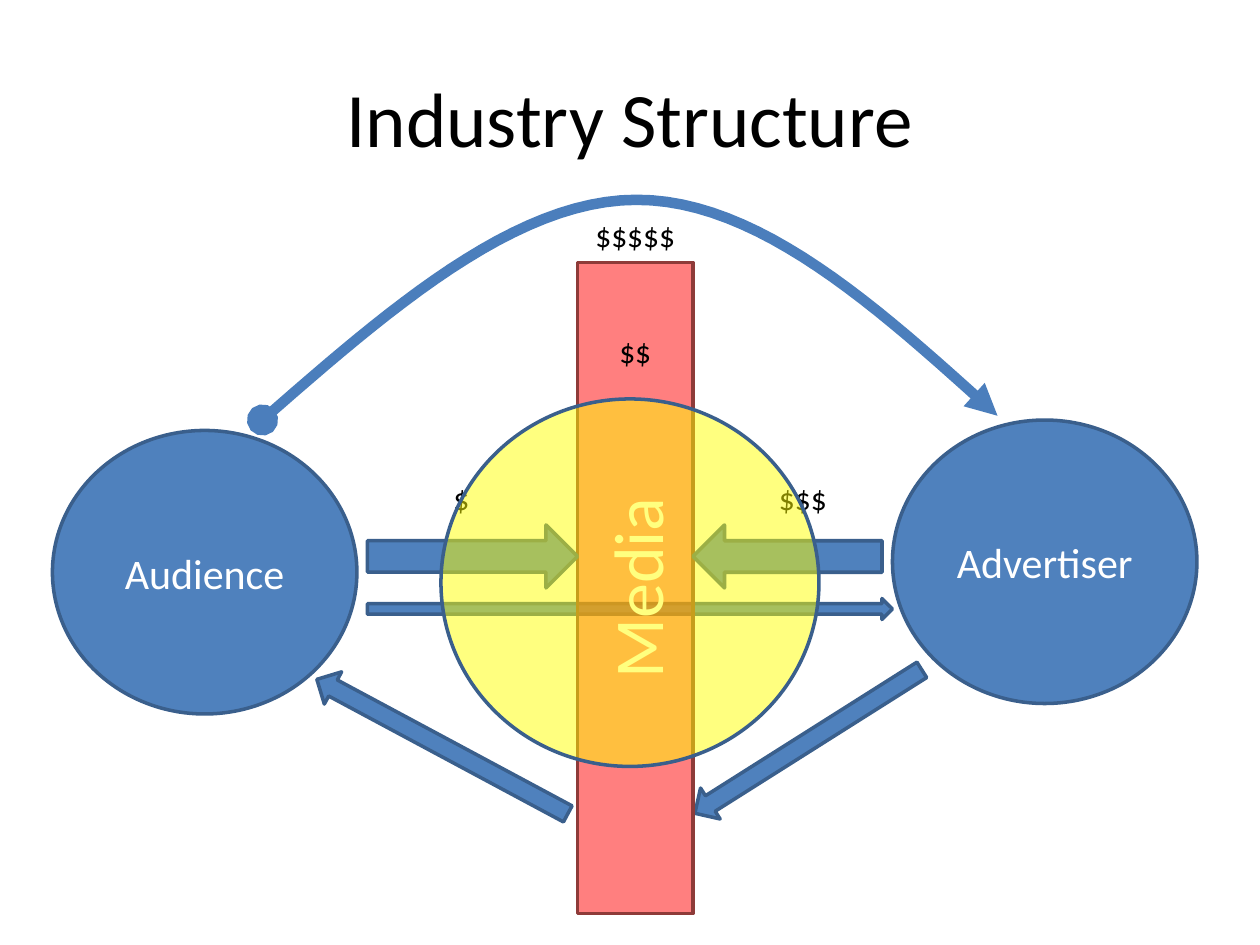
from dataclasses import dataclass

from lxml import etree
from pptx import Presentation
from pptx.dml.color import RGBColor
from pptx.enum.shapes import MSO_SHAPE
from pptx.enum.text import MSO_ANCHOR, PP_ALIGN
from pptx.oxml.ns import qn
from pptx.slide import Slide
from pptx.util import Pt

ELLIPSE = MSO_SHAPE.OVAL
RECTANGLE = MSO_SHAPE.RECTANGLE
ARROW = MSO_SHAPE.RIGHT_ARROW
LEFT, CENTER = PP_ALIGN.LEFT, PP_ALIGN.CENTER
MIDDLE, TOP = MSO_ANCHOR.MIDDLE, MSO_ANCHOR.TOP
TITLE_ONLY = 5


def color(value):
    return RGBColor.from_string(value)


def place(shape, left, top, width, height):
    shape.left, shape.top = Pt(left), Pt(top)
    shape.width, shape.height = Pt(width), Pt(height)


def write(shape, text, font="Calibri", size=18, ink="000000", align=CENTER, anchor=TOP, vertical=None):
    frame = shape.text_frame
    frame.word_wrap = True
    frame.vertical_anchor = anchor
    if vertical:
        shape.element.txBody.find(qn("a:bodyPr")).set("vert", vertical)
    paragraph = frame.paragraphs[0]
    paragraph.alignment = align
    run = paragraph.add_run()
    run.text = text
    run.font.name = font
    run.font.size = Pt(size)
    run.font.color.rgb = color(ink)


def bezier(start, first, second, end, steps=24):
    """Return the points of a cubic curve after its start."""
    points = []
    for step in range(1, steps + 1):
        t = step / steps
        weights = ((1 - t) ** 3, 3 * t * (1 - t) ** 2, 3 * t * t * (1 - t), t ** 3)
        points.append(tuple(
            sum(weight * value for weight, value in zip(weights, values))
            for values in zip(start, first, second, end)
        ))
    return points


@dataclass
class Diagram:
    slide: Slide
    fill: str = "4F81BD"
    outline: str = "3A5F8C"
    curve_color: str = "4B7EBC"

    def title(self, text, box):
        title = self.slide.shapes.title
        place(title, *box)
        write(title, text, size=44, anchor=MIDDLE)

    def block(self, kind, box, fill=None, outline=None, opacity=None, rotation=0):
        shape = self.slide.shapes.add_shape(kind, *map(Pt, box))
        shape.shadow.inherit = False
        shape.rotation = rotation
        shape.fill.solid()
        shape.fill.fore_color.rgb = color(fill or self.fill)
        if opacity is not None:
            rgb = shape.element.spPr.find(qn("a:solidFill")).find(qn("a:srgbClr"))
            etree.SubElement(rgb, qn("a:alpha")).set("val", str(opacity * 1000))
        shape.line.color.rgb = color(outline or self.outline)
        shape.line.width = Pt(2)
        return shape

    def party(self, text, left, top):
        circle = self.block(ELLIPSE, (left, top, 174, 162))
        write(circle, text, size=24, ink="FFFFFF", anchor=MIDDLE)

    def arrow(self, box, rotation=0):
        self.block(ARROW, box, rotation=rotation)

    def label(self, text, box, align=CENTER):
        write(self.slide.shapes.add_textbox(*map(Pt, box)), text, align=align)

    def curve(self, start, *segments):
        """Draw joined cubic curves from a dot to an arrowhead."""
        builder = self.slide.shapes.build_freeform(Pt(start[0]), Pt(start[1]))
        for segment in segments:
            points = bezier(start, *segment)
            builder.add_line_segments([(Pt(x), Pt(y)) for x, y in points], close=False)
            start = segment[-1]
        shape = builder.convert_to_shape()
        shape.shadow.inherit = False
        shape.fill.background()
        shape.line.color.rgb = color(self.curve_color)
        shape.line.width = Pt(6)
        line = shape.element.spPr.find(qn("a:ln"))
        etree.SubElement(line, qn("a:round"))
        for end, kind in (("headEnd", "oval"), ("tailEnd", "triangle")):
            etree.SubElement(line, qn(f"a:{end}")).set("type", kind)


def main():
    presentation = Presentation()
    presentation.slide_width, presentation.slide_height = Pt(720), Pt(540)
    slide = presentation.slides.add_slide(presentation.slide_layouts[TITLE_ONLY])
    diagram = Diagram(slide)

    diagram.title("Industry Structure", (36, 21.6, 648, 90))
    diagram.arrow((385.2, 413.3, 153.4, 20.9), rotation=147.7)
    diagram.arrow((210, 342, 300, 12))
    diagram.party("Advertiser", 510, 240)
    diagram.party("Audience", 30, 246)

    media = diagram.block(RECTANGLE, (330, 150, 66, 372), "FF0000", "8E3B39", opacity=50)
    write(media, "Media", size=40, ink="FFFFFF", anchor=MIDDLE, vertical="vert270")
    diagram.arrow((171.4, 416.2, 162.7, 20.9), rotation=208.2)

    diagram.arrow((210, 300, 120, 36))
    diagram.label("$", (252, 270, 36, 30), align=LEFT)
    diagram.arrow((396, 300, 108, 36), rotation=180)
    diagram.label("$$$", (438, 270, 60, 30), align=LEFT)

    diagram.curve(
        (150, 240),
        ((222, 177), (294, 114.3), (363.6, 114.2)),
        ((433.4, 114), (501.8, 175.7), (570, 237.6)),
    )
    diagram.label("$$$$$", (324, 120, 78, 29))
    diagram.label("$$", (336, 186, 54, 29))
    diagram.block(ELLIPSE, (252, 228, 216, 210), "FFFF00", opacity=50)

    presentation.save("out.pptx")


if __name__ == "__main__":
    main()
